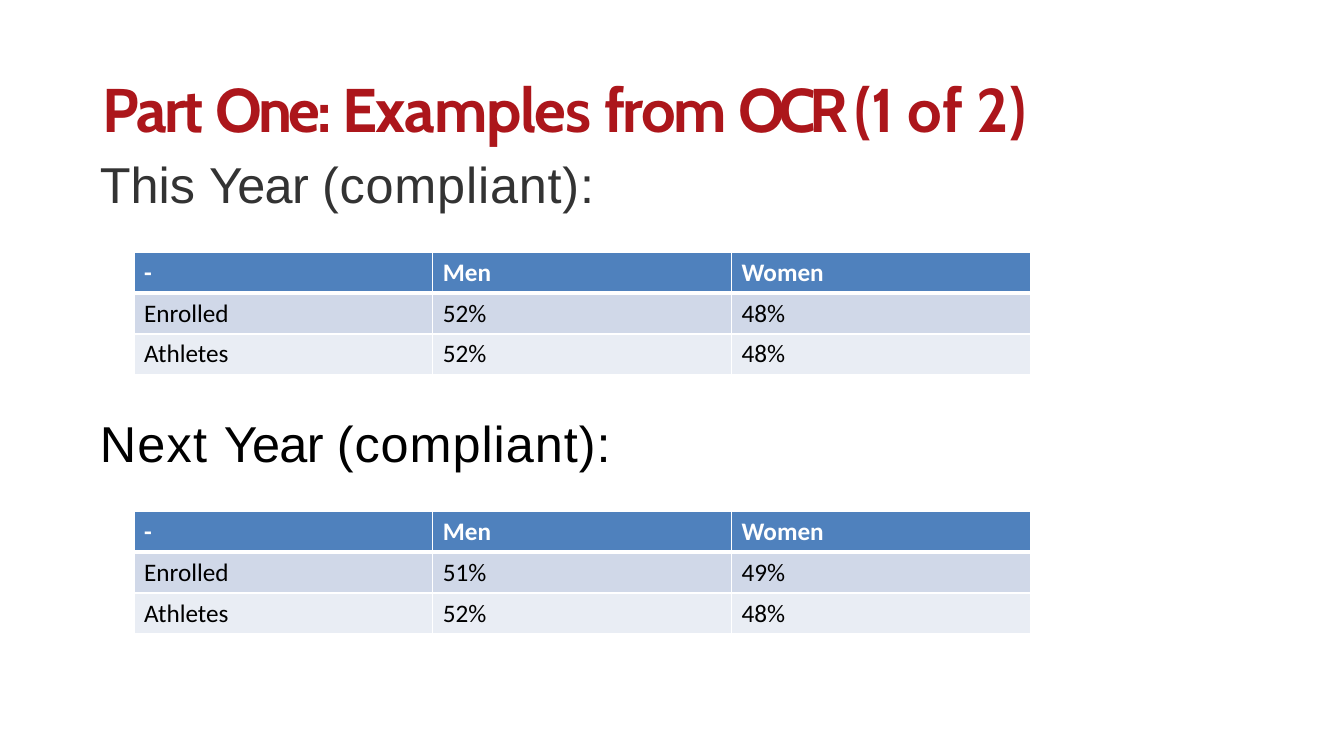
from dataclasses import dataclass

import pptx
import pptx.dml.color
import pptx.enum.text
import pptx.oxml.ns
import pptx.util
from lxml import etree
from pptx.util import Inches


@dataclass(frozen=True)
class Theme:
    title: str = "AC161B"
    heading: str = "333333"
    text: str = "000000"
    white: str = "FFFFFF"
    header: str = "4F81BD"
    bands: tuple = ("D0D8E8", "E9EDF4")
    title_font: str = "Cabin"
    heading_font: str = "Arial"
    table_font: str = "Calibri"
    title_size: int = 44
    heading_size: int = 36
    table_size: int = 18


THEME = Theme()


def rgb(color):
    return pptx.dml.color.RGBColor.from_string(color)


def set_font(p, name, size, color, bold=False):
    p.font.name = name
    p.font.size = pptx.util.Pt(size)
    p.font.bold = bold
    p.font.color.rgb = rgb(color)


def set_frame(tf, top_inset):
    tf.word_wrap = True
    tf.auto_size = pptx.enum.text.MSO_AUTO_SIZE.NONE
    tf.vertical_anchor = pptx.enum.text.MSO_ANCHOR.TOP
    tf.margin_left = tf.margin_right = tf.margin_bottom = 0
    tf.margin_top = Inches(top_inset)


def add_spaced_runs(p, runs, indent):
    """Fill a paragraph with (text, letter spacing in points) runs."""
    p.alignment = pptx.enum.text.PP_ALIGN.LEFT
    pPr = p._p.get_or_add_pPr()
    pPr.set("marL", str(Inches(indent)))
    pPr.set("indent", "0")
    for text, spacing in runs:
        r = p.add_run()
        r.text = text
        r._r.get_or_add_rPr().set("spc", str(round(spacing * 100)))


def fill_title(sp):
    sp.left, sp.top = Inches(0.98), Inches(0.57)
    sp.width, sp.height = Inches(10.42), Inches(1.56)
    tf = sp.text_frame
    set_frame(tf, 0.13)
    p = tf.paragraphs[0]
    add_spaced_runs(p, [("Part ", -1.8), ("One: ", -2.5), ("Examples ", -0.9),
                        ("from ", -1.6), ("OCR ", -5), ("(1 of ", 0),
                        ("2)", -0.2)], 0.04)
    set_font(p, THEME.title_font, THEME.title_size, THEME.title, bold=True)
    p = tf.add_paragraph()
    add_spaced_runs(p, [("This ", 0), ("Year ", -0.5),
                        ("(compliant):", 0.6)], 0.01)
    p.space_before = pptx.util.Pt(6.3)
    set_font(p, THEME.heading_font, THEME.heading_size, THEME.heading)


def add_next_year_heading(s):
    sp = s.shapes.add_textbox(Inches(0.98), Inches(4.08),
                              Inches(5.15), Inches(0.63))
    set_frame(sp.text_frame, 0.01)
    p = sp.text_frame.paragraphs[0]
    add_spaced_runs(p, [("Next ", 0.9), ("Year ", -0.5),
                        ("(compliant):", 0.7)], 0.01)
    set_font(p, THEME.heading_font, THEME.heading_size, THEME.text)


def set_borders(cell, top, bottom):
    tcPr = cell._tc.get_or_add_tcPr()
    qn = pptx.oxml.ns.qn
    for side, width in (("L", 1), ("R", 1), ("T", top), ("B", bottom)):
        ln = etree.SubElement(tcPr, qn(f"a:ln{side}"),
                              w=str(pptx.util.Pt(width)))
        fill = etree.SubElement(ln, qn("a:solidFill"))
        etree.SubElement(fill, qn("a:srgbClr"), val=THEME.white)


def add_share_table(s, top, enrolled, athletes):
    rows = [("-", "Men", "Women"), ("Enrolled", *enrolled),
            ("Athletes", *athletes)]
    table = s.shapes.add_table(3, 3, Inches(1.33), Inches(top),
                               Inches(8.89), Inches(1.22)).table
    for i, values in enumerate(rows):
        is_header = i == 0
        for j, value in enumerate(values):
            cell = table.cell(i, j)
            set_borders(cell, top=3 if i == 1 else 1,
                        bottom=3 if is_header else 1)
            cell.fill.solid()
            cell.fill.fore_color.rgb = rgb((THEME.header, *THEME.bands)[i])
            cell.text = value
            set_font(cell.text_frame.paragraphs[0], THEME.table_font,
                     THEME.table_size,
                     THEME.white if is_header else THEME.text, is_header)


def main():
    prs = pptx.Presentation()
    prs.slide_width, prs.slide_height = Inches(13.33), Inches(7.5)
    s = prs.slides.add_slide(prs.slide_layouts.get_by_name("Title Only"))
    fill_title(s.shapes.title)
    add_share_table(s, 2.5, ("52%", "48%"), ("52%", "48%"))
    add_next_year_heading(s)
    add_share_table(s, 5.07, ("51%", "49%"), ("52%", "48%"))
    prs.save("out.pptx")


if __name__ == "__main__":
    main()
